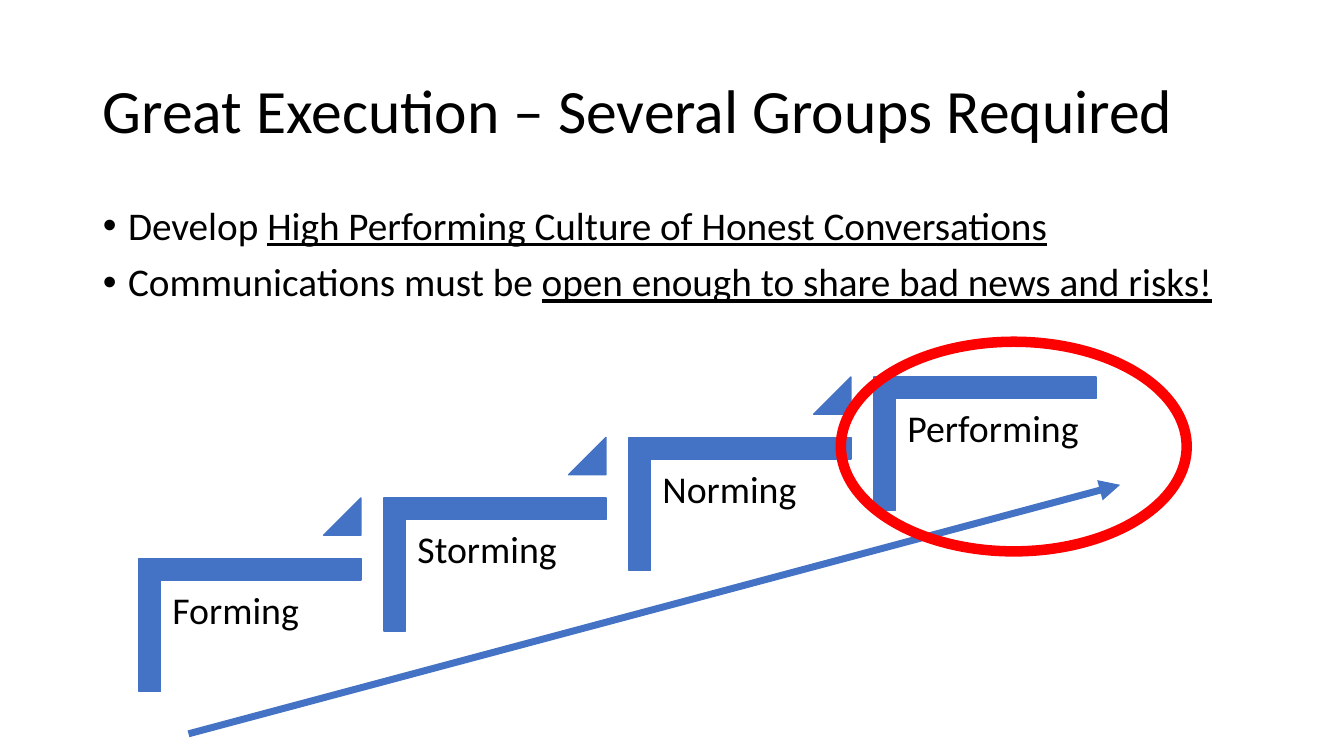
from dataclasses import dataclass

from lxml.etree import SubElement as SubEl
from pptx import Presentation
from pptx.dml.color import RGBColor as Color
from pptx.enum.shapes import MSO_CONNECTOR as Link, MSO_SHAPE as Kind
from pptx.enum.text import MSO_ANCHOR as Anchor, MSO_AUTO_SIZE as Fit, PP_ALIGN as Align
from pptx.oxml.ns import qn
from pptx.shapes.autoshape import Shape
from pptx.slide import Slide
from pptx.text.text import _Paragraph as Para
from pptx.util import Inches, Pt


@dataclass(frozen=True)
class Theme:
    font: str = "Calibri"
    ink: Color = Color(0, 0, 0)
    blue: Color = Color(0x44, 0x72, 0xC4)
    red: Color = Color(0xFF, 0, 0)
    title: float = 44
    body: float = 28
    label: float = 27
    edge: float = 1
    arrow: float = 5
    ring: float = 7.5


@dataclass(frozen=True)
class Box:
    left: float
    top: float
    width: float
    height: float

    def shift(self, right: float, down: float) -> "Box":
        return Box(self.left + right, self.top + down, self.width, self.height)

    def spans(self) -> list[int]:
        return [Inches(n) for n in (self.left, self.top, self.width, self.height)]


@dataclass(frozen=True)
class Point:
    plain: str
    lined: str


THEME = Theme()
TITLE = "Great Execution – Several Groups Required"
POINTS = [
    Point("Develop ", "High Performing Culture of Honest Conversations"),
    Point("Communications must be ", "open enough to share bad news and risks!"),
]
STAGES = ["Forming", "Storming", "Norming", "Performing"]
STEP_X, STEP_Y = 2.43, -0.6
CORNER = Box(1.82, 5.1, 1.32, 2.2)
LABEL = Box(1.6, 5.76, 1.98, 1.74)
WEDGE = Box(3.21, 4.94, 0.37, 0.37)
RING = Box(8.34, 3.39, 3.43, 2.08)


def place(shape: Shape, box: Box) -> None:
    shape.left, shape.top, shape.width, shape.height = box.spans()


def style(para: Para, size: float) -> None:
    para.alignment = Align.LEFT
    para.line_spacing = 0.9
    for run in para.runs:
        run.font.name = THEME.font
        run.font.size = Pt(size)
        run.font.color.rgb = THEME.ink


def add_title(slide: Slide) -> None:
    title = slide.shapes.title
    place(title, Box(0.92, 0.4, 11.5, 1.45))
    frame = title.text_frame
    frame.text = TITLE
    frame.auto_size = Fit.NONE
    frame.vertical_anchor = Anchor.MIDDLE
    style(frame.paragraphs[0], THEME.title)


def add_bullet(para: Para) -> None:
    props = para._p.get_or_add_pPr()
    props.set("marL", str(Inches(0.25)))
    props.set("indent", str(Inches(-0.25)))
    SubEl(props, qn("a:buFont"), typeface="Arial")
    SubEl(props, qn("a:buChar"), char="•")


def add_body(slide: Slide) -> None:
    body = slide.placeholders[1]
    place(body, Box(0.92, 2, 11.5, 4.76))
    frame = body.text_frame
    frame.text = "\n".join(point.plain for point in POINTS)
    frame.auto_size = Fit.NONE
    for para, point in zip(frame.paragraphs, POINTS):
        run = para.add_run()
        run.text = point.lined
        run.font.underline = True
        style(para, THEME.body)
        para.space_before = Pt(10)
        add_bullet(para)


def add_solid(slide: Slide, kind: Kind, box: Box, knobs: list[float]) -> Shape:
    shape = slide.shapes.add_shape(kind, *box.spans())
    shape.shadow.inherit = False
    for slot, knob in enumerate(knobs):
        shape.adjustments[slot] = knob
    shape.fill.solid()
    shape.fill.fore_color.rgb = THEME.blue
    shape.line.color.rgb = THEME.blue
    shape.line.width = Pt(THEME.edge)
    return shape


def add_label(slide: Slide, box: Box, text: str) -> None:
    frame = slide.shapes.add_textbox(*box.spans()).text_frame
    frame.word_wrap = True
    frame.margin_left = frame.margin_right = Inches(0.11)
    frame.margin_top = frame.margin_bottom = Inches(0.11)
    frame.text = text
    style(frame.paragraphs[0], THEME.label)


def add_stairs(slide: Slide) -> None:
    for step, stage in enumerate(STAGES):
        right, down = step * STEP_X, step * STEP_Y
        corner = add_solid(slide, Kind.CORNER, CORNER.shift(right, down), [0.161, 0.161])
        corner.rotation = 90
        add_label(slide, LABEL.shift(right, down), stage)
        if step < len(STAGES) - 1:
            add_solid(slide, Kind.ISOSCELES_TRIANGLE, WEDGE.shift(right, down), [1])


def add_arrow(slide: Slide) -> None:
    ends = [Inches(n) for n in (1.87, 7.28, 11.11, 4.81)]
    arrow = slide.shapes.add_connector(Link.STRAIGHT, *ends)
    arrow.line.color.rgb = THEME.blue
    arrow.line.width = Pt(THEME.arrow)
    SubEl(arrow.line._get_or_add_ln(), qn("a:tailEnd"), type="triangle")
    SubEl(arrow._element.spPr, qn("a:effectLst"))


def add_ring(slide: Slide) -> None:
    ring = slide.shapes.add_shape(Kind.OVAL, *RING.spans())
    ring.shadow.inherit = False
    ring.fill.background()
    ring.line.color.rgb = THEME.red
    ring.line.width = Pt(THEME.ring)


def main() -> None:
    deck = Presentation()
    deck.slide_width, deck.slide_height = Inches(13.33), Inches(7.5)
    slide = deck.slides.add_slide(deck.slide_layouts[1])
    add_title(slide)
    add_body(slide)
    add_stairs(slide)
    add_arrow(slide)
    add_ring(slide)
    deck.save("out.pptx")


if __name__ == "__main__":
    main()
